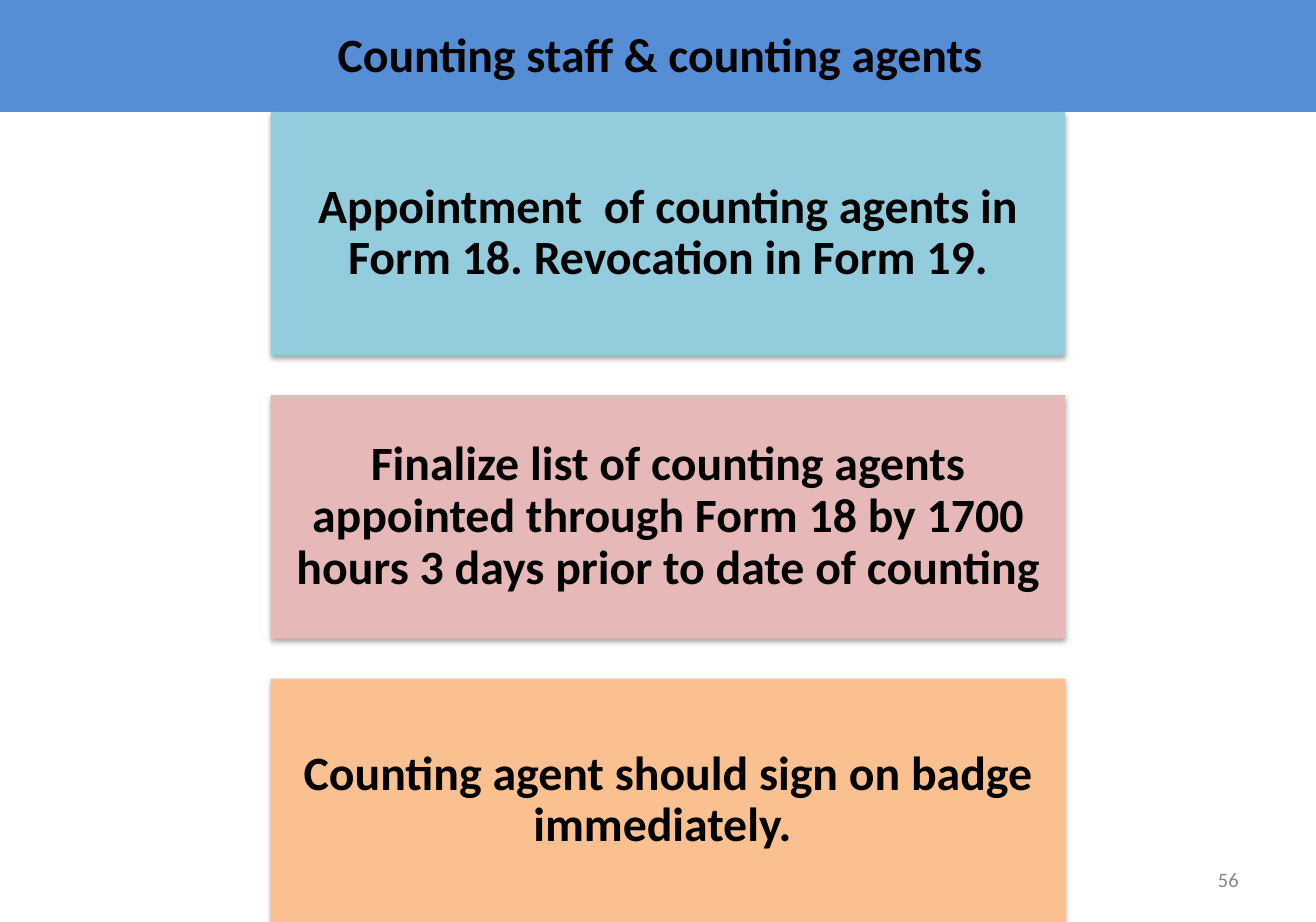
from dataclasses import dataclass

from lxml import etree
from pptx import Presentation
from pptx.dml.color import RGBColor
from pptx.enum.shapes import MSO_SHAPE
from pptx.enum.text import MSO_ANCHOR, MSO_AUTO_SIZE, PP_ALIGN
from pptx.oxml.ns import qn
from pptx.util import Inches, Pt

RECTANGLE = MSO_SHAPE.RECTANGLE
MIDDLE = MSO_ANCHOR.MIDDLE
CENTER, RIGHT = PP_ALIGN.CENTER, PP_ALIGN.RIGHT
NO_AUTOFIT = MSO_AUTO_SIZE.NONE
TITLE_ONLY = 5

SLIDE_W, SLIDE_H = 10.7, 7.5
BAND_BOTTOM = 0.91
CARD_LEFT, CARD_W, CARD_H = 2.2, 6.46, 1.98


@dataclass(frozen=True)
class Theme:
    font: str = "Calibri"
    heading_size: int = 28
    number_size: int = 12
    text: str = "000000"
    number: str = "898989"
    band: str = "558ED5"
    cards: tuple = ("93CDDD", "E6B9B8", "FAC090")


THEME = Theme()

STEPS = (
    "Appointment  of counting agents in Form 18. Revocation in Form 19.",
    "Finalize list of counting agents appointed through Form 18 by 1700 "
    "hours 3 days prior to date of counting",
    "Counting agent should sign on badge immediately. ",
)


def place(shape, left, top, width, height):
    shape.left, shape.top = Inches(left), Inches(top)
    shape.width, shape.height = Inches(width), Inches(height)


def fill_solid(shape, color):
    shape.fill.solid()
    shape.fill.fore_color.rgb = RGBColor.from_string(color)
    shape.line.fill.background()


def write(shape, text, size, color, align, bold=False):
    tf = shape.text_frame
    tf.word_wrap = True
    tf.auto_size = NO_AUTOFIT
    tf.vertical_anchor = MIDDLE
    p = tf.paragraphs[0]
    p.alignment = align
    r = p.add_run()
    r.text = text
    r.font.name = THEME.font
    r.font.size = Pt(size)
    r.font.bold = bold
    r.font.color.rgb = RGBColor.from_string(color)
    return tf


def add_soft_shadow(shape):
    """Cast a faint black shadow straight down."""
    shape.shadow.inherit = False
    effects = shape.element.spPr.find(qn("a:effectLst"))
    shadow = etree.SubElement(
        effects, qn("a:outerShdw"), blurRad=str(Pt(3.1)), dist=str(Pt(1.8)),
        dir="5400000", rotWithShape="0")
    black = etree.SubElement(shadow, qn("a:srgbClr"), val="000000")
    etree.SubElement(black, qn("a:alpha"), val="35000")


def add_title_band(s, text):
    title = s.shapes.title
    place(title, 0, -0.04, SLIDE_W + 0.03, BAND_BOTTOM + 0.04)
    fill_solid(title, THEME.band)
    write(title, text, THEME.heading_size, THEME.text, CENTER, bold=True)


def add_card(s, top, text, color):
    sp = s.shapes.add_shape(RECTANGLE, Inches(CARD_LEFT), Inches(top),
                            Inches(CARD_W), Inches(CARD_H))
    fill_solid(sp, color)
    add_soft_shadow(sp)
    tf = write(sp, text, THEME.heading_size, THEME.text, CENTER, bold=True)
    tf.margin_left = tf.margin_right = Inches(0.12)
    tf.margin_top = tf.margin_bottom = Inches(0.12)
    tf.paragraphs[0].line_spacing = 0.9


def add_page_number(s, number):
    box = s.shapes.add_textbox(Inches(7.67), Inches(6.95),
                               Inches(2.5), Inches(0.4))
    write(box, number, THEME.number_size, THEME.number, RIGHT)


def main():
    prs = Presentation()
    prs.slide_width, prs.slide_height = Inches(SLIDE_W), Inches(SLIDE_H)
    s = prs.slides.add_slide(prs.slide_layouts[TITLE_ONLY])
    add_title_band(s, "Counting staff & counting agents")

    # The cards run from the title band to the foot of the slide.
    pitch = (SLIDE_H - CARD_H - BAND_BOTTOM) / (len(STEPS) - 1)
    for i, (text, color) in enumerate(zip(STEPS, THEME.cards)):
        add_card(s, BAND_BOTTOM + i * pitch, text, color)

    add_page_number(s, "56")
    prs.save("out.pptx")


if __name__ == "__main__":
    main()
